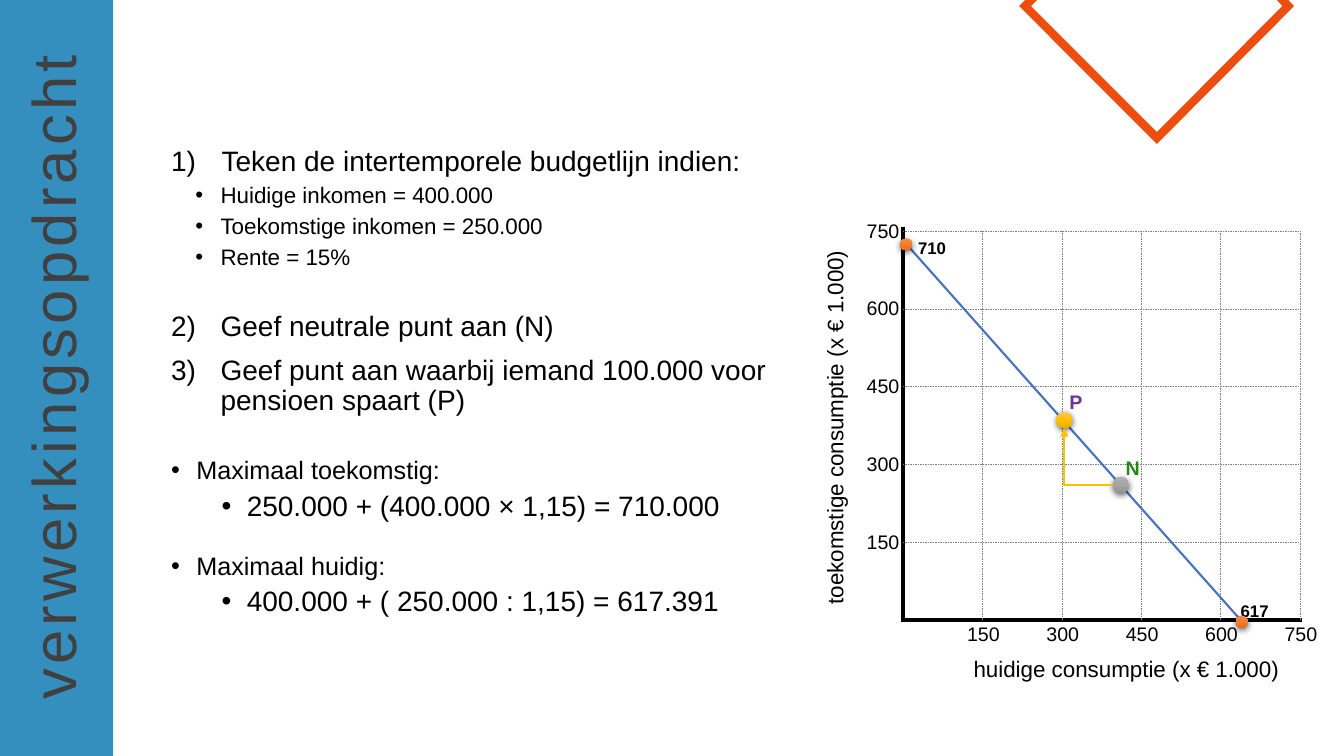
from lxml import etree
from pptx import Presentation
from pptx.dml.color import RGBColor
from pptx.enum.dml import MSO_LINE
from pptx.enum.shapes import MSO_CONNECTOR, MSO_SHAPE
from pptx.enum.text import MSO_ANCHOR, MSO_AUTO_SIZE, PP_ALIGN
from pptx.oxml import parse_xml
from pptx.oxml.ns import nsdecls, qn
from pptx.util import Pt

STRAIGHT, ELBOW = MSO_CONNECTOR.STRAIGHT, MSO_CONNECTOR.ELBOW
RECTANGLE, OVAL = MSO_SHAPE.RECTANGLE, MSO_SHAPE.OVAL
DASH = MSO_LINE.DASH
TOP, LEFT = MSO_ANCHOR.TOP, PP_ALIGN.LEFT
FIT_SHAPE = MSO_AUTO_SIZE.SHAPE_TO_FIT_TEXT

COLORS = {
    "black": "000000", "title": "404040", "sidebar": "1A80B6", "diamond": "ED4D0F",
    "grid": "808080", "budget": "4472C4", "saving": "FFC000", "neutral": "258812",
    "pension": "7030A0",
}
GRADIENTS = {
    "limit": ("F18C57", "F67B28", "E56C19"),
    "neutral": ("AFAFAF", "A5A5A5", "939393"),
    "pension": ("FFC64B", "FFC000", "E3AB00"),
}
ORIGIN_X, ORIGIN_Y = 645, 443
STEP_X, STEP_Y = 56.7, 55.6
GRID_RIGHT, GRID_TOP = ORIGIN_X + 5 * STEP_X, ORIGIN_Y - 5 * STEP_Y

ASSIGNMENT = [
    ("Teken de intertemporele budgetlijn indien:", 0, 20, 36, -36, 10, "1)"),
    ("Huidige inkomen = 400.000", 1, 16, 35.3, -18, 5, "•"),
    ("Toekomstige inkomen = 250.000", 1, 16, 35.3, -18, 5, "•"),
    ("Rente = 15%", 1, 16, 35.3, -18, 5, "•"),
    ("Geef neutrale punt aan (N)", 0, 20, 35.3, -35.3, 29.5, "1)"),
    ("Geef punt aan waarbij iemand 100.000 voor pensioen spaart (P)",
     0, 20, 35.3, -35.3, 10, "1)"),
    ("Maximaal toekomstig:", 0, 18, 18, -18, 29.5, "•"),
    ("250.000 + (400.000 × 1,15) = 710.000", 1, 20, 54, -18, 5, "•"),
    ("Maximaal huidig:", 0, 18, 18, -18, 22, "•"),
    ("400.000 + ( 250.000 : 1,15) = 617.391", 1, 20, 54, -18, 5, "•"),
]


def assign(target, values):
    """Set every attribute in values on target."""
    for attribute, value in values.items():
        setattr(target, attribute, value)


class SlideBuilder:
    """Draw styled elements on one slide, with lengths in points."""

    def __init__(self, slide, font):
        """Keep the slide and its font."""
        self.slide, self.shapes, self.font = slide, slide.shapes, font

    def style(self, font, size, color, bold=False):
        """Apply the slide font with a size and colour."""
        assign(font, {"name": self.font, "size": Pt(size), "bold": bold})
        font.color.rgb = RGBColor.from_string(COLORS[color])

    def title(self, text, left, top, width, height):
        """Place the vertical title."""
        title = self.shapes.title
        assign(title, {"left": Pt(left), "top": Pt(top), "width": Pt(width),
                       "height": Pt(height), "rotation": 270})
        frame = title.text_frame
        frame.text = text
        assign(frame, {"word_wrap": False, "auto_size": FIT_SHAPE, "vertical_anchor": TOP})
        frame.paragraphs[0].alignment = LEFT
        run = frame.paragraphs[0].runs[0]
        self.style(run.font, 44, "title")
        run.font._element.set("spc", "300")

    def sidebar(self, width, height, opacity):
        """Put a translucent band behind the title."""
        band = self.shapes.add_shape(RECTANGLE, 0, 0, Pt(width), Pt(height))
        band.shadow.inherit = False
        band.line.fill.background()
        band.fill.solid()
        band.fill.fore_color.rgb = RGBColor.from_string(COLORS["sidebar"])
        tint = band._element.spPr.find(".//" + qn("a:srgbClr"))
        etree.SubElement(tint, qn("a:alpha")).set("val", str(opacity * 1000))
        self.shapes._spTree.insert(2, band._element)

    def outline(self, corners, color, weight):
        """Draw a closed, unfilled outline with sharp corners."""
        builder = self.shapes.build_freeform(Pt(corners[0][0]), Pt(corners[0][1]))
        builder.add_line_segments([(Pt(x), Pt(y)) for x, y in corners[1:]])
        outline = builder.convert_to_shape()
        outline.shadow.inherit = False
        outline.fill.background()
        outline.line.width = Pt(weight)
        outline.line.color.rgb = RGBColor.from_string(COLORS[color])
        etree.SubElement(outline.line._ln, qn("a:miter")).set("lim", "800000")

    def label(self, text, left, top, width, height, size, color="black", **options):
        """Add a one-line text."""
        box = self.shapes.add_textbox(Pt(left), Pt(top), Pt(width), Pt(height))
        box.rotation = options.get("rotation", 0)
        assign(box.text_frame, {"word_wrap": False, "auto_size": FIT_SHAPE})
        run = box.text_frame.paragraphs[0].add_run()
        run.text = text
        self.style(run.font, size, color, options.get("bold", False))

    def outline_list(self, items, left, top, width, height):
        """Add a list of numbered and bulleted lines."""
        box = self.shapes.add_textbox(Pt(left), Pt(top), Pt(width), Pt(height))
        frame = box.text_frame
        frame.word_wrap = True
        for index, (text, level, size, margin, indent, before, marker) in enumerate(items):
            line = frame.add_paragraph() if index else frame.paragraphs[0]
            assign(line, {"level": level, "line_spacing": 0.9, "space_before": Pt(before)})
            run = line.add_run()
            run.text = text
            self.style(run.font, size, "black")
            properties = line._p.get_or_add_pPr()
            properties.set("marL", str(Pt(margin)))
            properties.set("indent", str(Pt(indent)))
            if marker == "•":
                etree.SubElement(properties, qn("a:buFont")).set("typeface", self.font)
                etree.SubElement(properties, qn("a:buChar")).set("char", marker)
            else:
                etree.SubElement(properties, qn("a:buFont")).set("typeface", "+mj-lt")
                etree.SubElement(properties, qn("a:buAutoNum")).set("type", "arabicParenR")

    def line(self, start, end, color, weight, dash=None, kind=STRAIGHT):
        """Connect two points; an elbow turns once and ends in an arrow."""
        connector = self.shapes.add_connector(kind, *map(Pt, (*start, *end)))
        connector.line.color.rgb = RGBColor.from_string(COLORS[color])
        assign(connector.line, {"width": Pt(weight), "dash_style": dash})
        properties = connector._element.spPr
        if kind == ELBOW:
            properties.find(qn("a:prstGeom")).set("prst", "bentConnector2")
            etree.SubElement(connector.line._ln, qn("a:tailEnd")).set("type", "triangle")
        etree.SubElement(properties, qn("a:effectLst"))

    def marker(self, center, diameter, gradient):
        """Draw a shaded dot with a soft shadow."""
        x, y = (value - diameter / 2 for value in center)
        dot = self.shapes.add_shape(OVAL, Pt(x), Pt(y), Pt(diameter), Pt(diameter))
        dot.line.fill.background()
        stops = "".join(
            f'<a:gs pos="{index * 50000}"><a:srgbClr val="{color}"/></a:gs>'
            for index, color in enumerate(GRADIENTS[gradient]))
        properties = dot._element.spPr
        properties.insert(2, parse_xml(
            f'<a:gradFill {nsdecls("a")} rotWithShape="1"><a:gsLst>{stops}</a:gsLst>'
            '<a:lin ang="5400000" scaled="0"/></a:gradFill>'))
        properties.append(parse_xml(
            f'<a:effectLst {nsdecls("a")}><a:outerShdw blurRad="{Pt(4.5)}" dist="{Pt(1.5)}" '
            'dir="5400000" algn="ctr" rotWithShape="0"><a:srgbClr val="000000">'
            '<a:alpha val="63000"/></a:srgbClr></a:outerShdw></a:effectLst>'))


def main():
    """Build and save the budget line slide."""
    deck = Presentation()
    assign(deck, {"slide_width": Pt(960), "slide_height": Pt(540)})
    page = SlideBuilder(deck.slides.add_slide(deck.slide_layouts[5]), "Arial")
    page.outline([(741.6, -5), (911.5, -5), (920.2, 4.3), (826.4, 98.6), (732.2, 4.3)],
                 "diamond", 6)
    page.sidebar(80.8, 540, 88)
    page.title("verwerkingsopdracht", -203.8, 235.4, 482.4, 60.5)
    page.outline_list(ASSIGNMENT, 115.2, 101.5, 448.6, 418.3)

    page.line((ORIGIN_X, 162), (ORIGIN_X, ORIGIN_Y), "black", 3)
    page.line((930, ORIGIN_Y), (643.7, ORIGIN_Y), "black", 3)
    for step in range(1, 6):
        x, y = ORIGIN_X + step * STEP_X, ORIGIN_Y - step * STEP_Y
        amount = str(150 * step)
        page.line((ORIGIN_X, y), (GRID_RIGHT, y), "grid", 0.25, DASH)
        page.line((x, GRID_TOP), (x, ORIGIN_Y), "grid", 0.25, DASH)
        page.label(amount, 612, y - 12.5, 38.2, 24.2, 14)
        page.label(amount, x - 18, 440.6, 38.2, 24.2, 14)
    page.label("huidige consumptie (x € 1.000)", 688.3, 464.4, 235.4, 26.6, 16)
    page.label("toekomstige consumptie (x € 1.000)", 460.8, 290.2, 270.7, 26.6, 16,
               rotation=270)

    future_limit, present_limit = (647.3, 174.6), (887, 444.2)
    neutral, pension = (800.6, 346.3), (760.3, 300.2)
    page.label("617", 879.1, 425.5, 34.6, 21.6, 12, bold=True)
    page.label("710", 648.7, 166.3, 34.6, 21.6, 12, bold=True)
    page.line((647.3, 174.2), (886.3, ORIGIN_Y), "budget", 1.5)
    page.marker(future_limit, 8.6, "limit")
    page.marker(present_limit, 8.6, "limit")
    page.marker(neutral, 11.5, "neutral")
    page.label("N", 797, 321.8, 24.5, 24.5, 14, "neutral", bold=True)
    page.marker(pension, 11.5, "pension")
    page.label("P", 756.7, 275, 24.5, 24.5, 14, "pension", bold=True)
    page.line((794.9, 346.3), (760.3, 306), "saving", 1.5, kind=ELBOW)
    deck.save("out.pptx")


if __name__ == "__main__":
    main()
